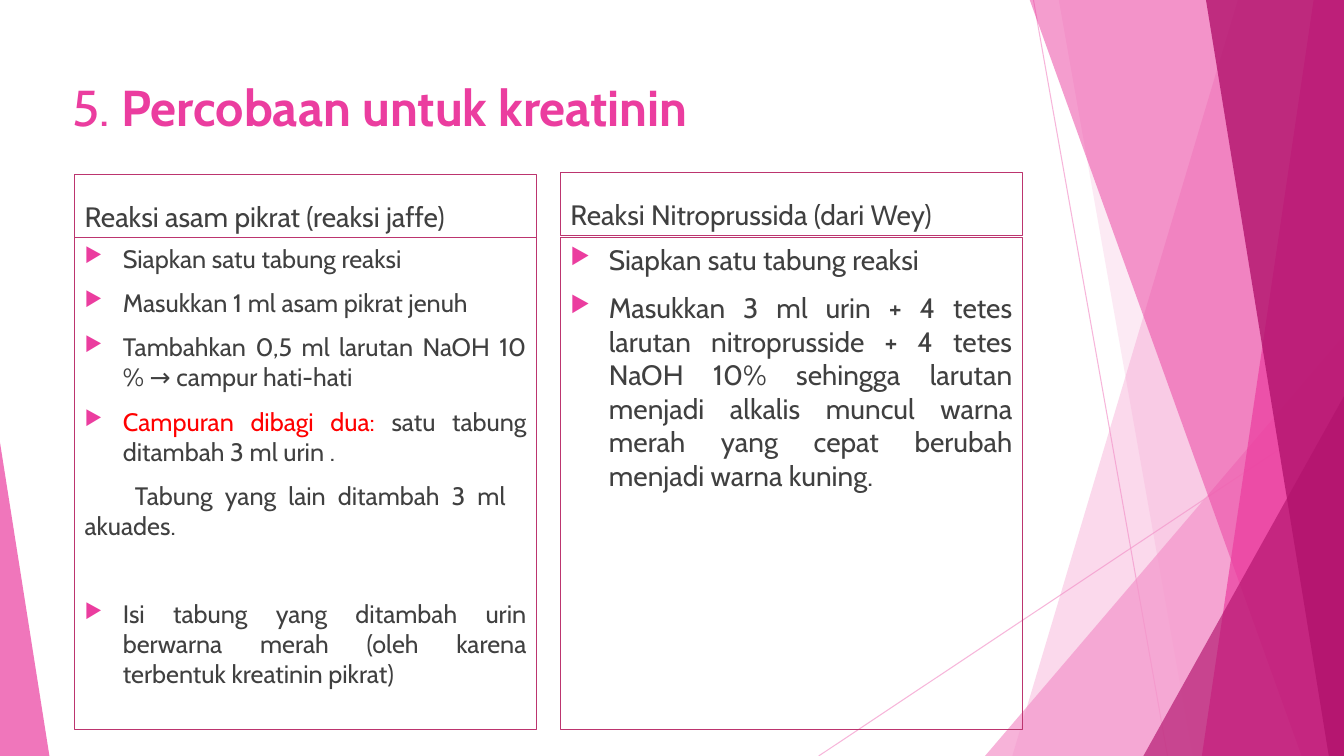
from lxml.etree import SubElement
from pptx import Presentation
from pptx.dml.color import RGBColor
from pptx.enum.shapes import MSO_CONNECTOR, MSO_SHAPE
from pptx.enum.text import MSO_ANCHOR, PP_ALIGN
from pptx.oxml.ns import qn
from pptx.util import Inches, Pt

WIDE, HIGH, TOP = 13.33, 7.5, -0.01
FONT = "Cabin"
COLORS = {"pale": "F496CB", "pink": "EB3D9F", "deep": "B2136D",
          "edge": "BC356F", "text": "404040", "red": "FF0000"}

RAYS = [((10.25, 0), (11.58, HIGH)), ((WIDE, 4.03), (8.12, HIGH))]
FACETS = [
    ("band", (12.28, 10.04), "pale", 36),
    ("band", (10.5, 11.83), "pale", 20),
    ("wedge", (9.77, 3.33, 3.56, 4.17, 1), "pale", 72),
    ("band", (10.21, 12.91), "pink", 50),
    ("band", (13.03, 11.92), "pink", 70),
    ("band", (11.96, 13.18), "deep", 80),
    ("wedge", (11.34, 3.93, 1.99, 3.57, 1), "deep", 66),
    ("wedge", (0, 4.39, 0.49, 3.11, 0), "pink", 70),
]

TITLE = [("5. ", "pink", False), ("Percobaan untuk kreatinin", "pink", True)]
PANELS = [
    {"head": "Reaksi asam pikrat (reaksi jaffe)", "left": 0.74, "top": 1.73, "size": 18,
     "items": [
         (True, 10, [("Siapkan satu tabung reaksi", "text")]),
         (True, 10, [("Masukkan 1 ml asam pikrat jenuh", "text")]),
         (True, 10, [("Tambahkan 0,5 ml larutan NaOH 10 % → campur hati-hati", "text")]),
         (True, 10, [("Campuran dibagi dua: ", "red"),
                     ("satu tabung ditambah 3 ml urin .", "text")]),
         (False, 10, [("\tTabung yang lain ditambah 3 ml \takuades.", "text")]),
         (True, 41, [("Isi tabung yang ditambah urin berwarna merah "
                      "(oleh karena terbentuk kreatinin pikrat)", "text")]),
     ]},
    {"head": "Reaksi Nitroprussida (dari Wey)", "left": 5.56, "top": 1.71, "size": 20,
     "items": [
         (True, 10, [("Siapkan satu tabung reaksi", "text")]),
         (True, 10, [("Masukkan 3 ml urin + 4 tetes larutan nitroprusside + 4 tetes "
                      "NaOH 10% sehingga larutan menjadi alkalis muncul warna merah "
                      "yang cepat berubah menjadi warna kuning.", "text")]),
     ]},
]


def put(obj, values):
    for name, value in values.items():
        setattr(obj, name, value)


def tint(name):
    return RGBColor.from_string(COLORS[name])


def fade(shape, pct):
    color = next(shape._element.spPr.iter(qn("a:srgbClr")))
    SubElement(color, qn("a:alpha"), val=str(pct * 1000))


def ray(start, end):
    line = slide.shapes.add_connector(
        MSO_CONNECTOR.STRAIGHT, *map(Inches, start + end))
    line.line.color.rgb = tint("pale")
    line.line.width = Pt(0.75)
    fade(line, 70)
    SubElement(line._element.spPr, qn("a:effectLst"))


def band(top, foot):
    pts = [(Inches(x), Inches(y)) for x, y in
           ((top, TOP), (WIDE, TOP), (WIDE, HIGH), (foot, HIGH))]
    pen = slide.shapes.build_freeform(*pts[0])
    pen.add_line_segments(pts[1:], close=True)
    return pen.convert_to_shape()


def wedge(left, top, width, height, tip):
    shape = slide.shapes.add_shape(
        MSO_SHAPE.ISOSCELES_TRIANGLE, *map(Inches, (left, top, width, height)))
    shape.adjustments[0] = tip
    return shape


def write(para, text, size, color, bold=False):
    run = para.add_run()
    run.text = text
    put(run.font, {"name": FONT, "size": Pt(size), "bold": bold})
    run.font.color.rgb = tint(color)


def frame(left, top, width, height, anchor, edge=True):
    box = slide.shapes.add_textbox(*map(Inches, (left, top, width, height)))
    put(box.text_frame, {"word_wrap": True, "vertical_anchor": anchor})
    if edge:
        box.line.color.rgb = tint("edge")
        box.line.width = Pt(0.75)
    return box.text_frame


def bullet(para):
    props = para._p.get_or_add_pPr()
    for key, value in (("marL", 0.38), ("indent", -0.38)):
        props.set(key, str(Inches(value)))
    color = SubElement(props, qn("a:buClr"))
    SubElement(color, qn("a:srgbClr"), val=COLORS["pink"])
    SubElement(props, qn("a:buSzPct"), val="80000")
    SubElement(props, qn("a:buChar"), char="▶")


def panel(head, left, top, size, items):
    title = frame(left, top, 4.58, 0.63, MSO_ANCHOR.BOTTOM)
    write(title.paragraphs[0], head, 20, "text")
    body = frame(left, 2.36, 4.58, 4.88, MSO_ANCHOR.TOP)
    for i, (mark, gap, runs) in enumerate(items):
        para = body.add_paragraph() if i else body.paragraphs[0]
        put(para, {"alignment": PP_ALIGN.JUSTIFY, "space_before": Pt(gap)})
        if mark:
            bullet(para)
        for text, color in runs:
            write(para, text, size, color)


deck = Presentation()
put(deck, {"slide_width": Inches(WIDE), "slide_height": Inches(HIGH)})
slide = deck.slides.add_slide(deck.slide_layouts[6])

for start, end in RAYS:
    ray(start, end)
for kind, dims, color, pct in FACETS:
    shape = {"band": band, "wedge": wedge}[kind](*dims)
    shape.shadow.inherit = False
    shape.fill.solid()
    shape.fill.fore_color.rgb = tint(color)
    shape.line.fill.background()
    fade(shape, pct)

heading = frame(0.62, 0.68, 9.4, 0.76, MSO_ANCHOR.MIDDLE, edge=False)
for text, color, bold in TITLE:
    write(heading.paragraphs[0], text, 36, color, bold)
for data in PANELS:
    panel(**data)

deck.save("out.pptx")
